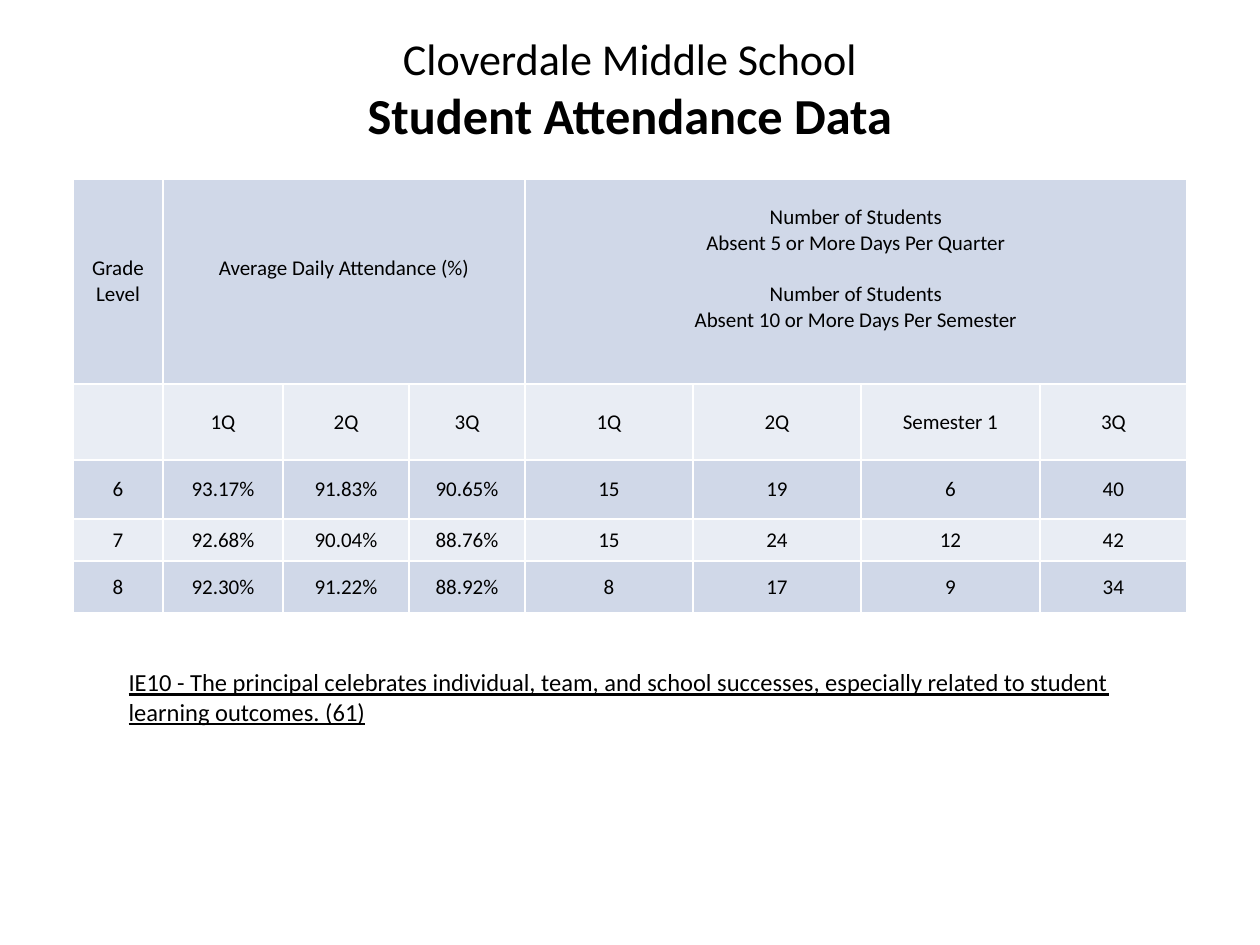
from dataclasses import dataclass
from typing import Any

from lxml.etree import SubElement
from pptx import Presentation
from pptx.dml.color import RGBColor
from pptx.enum.text import MSO_ANCHOR, MSO_AUTO_SIZE, PP_ALIGN
from pptx.oxml.ns import qn
from pptx.util import Pt

EMU_PER_INCH = 914400
PX_PER_INCH = 126
BLACK = "000000"
WHITE = "FFFFFF"
BANDS = ["D0D8E8", "E9EDF4"]
COLUMN_WIDTHS = [90, 120, 126, 116, 168, 168, 179, 147]
ROW_HEIGHTS = [205, 76, 59, 42, 52]
CELL_MARGIN = 6
CELL_FORMAT = {"size": Pt(12), "name": "Calibri", "bold": False}


@dataclass
class Heading:
    column: int
    span: int
    top: int
    lines: list[str]
    gap_before: int = -1


HEADINGS = [
    Heading(0, 1, 77, ["Grade", "Level"]),
    Heading(1, 3, 77, ["Average Daily Attendance (%)"]),
    Heading(
        4,
        4,
        26,
        [
            "Number of Students",
            "Absent 5 or More Days Per Quarter",
            "Number of Students",
            "Absent 10 or More Days Per Semester",
        ],
        2,
    ),
]
ROWS = [
    ["", "1Q", "2Q", "3Q", "1Q", "2Q", "Semester 1", "3Q"],
    ["6", "93.17%", "91.83%", "90.65%", "15", "19", "6", "40"],
    ["7", "92.68%", "90.04%", "88.76%", "15", "24", "12", "42"],
    ["8", "92.30%", "91.22%", "88.92%", "8", "17", "9", "34"],
]


def px(length: int) -> int:
    return round(length * EMU_PER_INCH / PX_PER_INCH)


def color(value: str) -> RGBColor:
    return RGBColor.from_string(value)


def set_all(target: Any, values: dict[str, Any]) -> None:
    for name, value in values.items():
        setattr(target, name, value)


def place(shape: Any, left: int, top: int, width: int, height: int) -> None:
    set_all(shape, {"left": px(left), "top": px(top), "width": px(width), "height": px(height)})


def add_span(para: Any, text: str, values: dict[str, Any]) -> None:
    span = para.add_run()
    span.text = text
    set_all(span.font, values)
    span.font.color.rgb = color(BLACK)


def add_title(page: Any) -> None:
    title = page.shapes.title
    place(title, 0, 73, 1260, 78)
    set_all(
        title.text_frame,
        {"vertical_anchor": MSO_ANCHOR.BOTTOM, "auto_size": MSO_AUTO_SIZE.NONE, "word_wrap": True},
    )
    para = title.text_frame.paragraphs[0]
    para.alignment = PP_ALIGN.CENTER
    add_span(para, "Cloverdale Middle School", {"size": Pt(25.2), "name": "Calibri"})
    para.add_line_break()
    add_span(para, "Student Attendance Data", {"size": Pt(28.8), "name": "Calibri", "bold": True})


def add_borders(cell: Any) -> None:
    properties = cell._tc.get_or_add_tcPr()
    for index, side in enumerate(["a:lnL", "a:lnR", "a:lnT", "a:lnB"]):
        line = properties.makeelement(qn(side), {"w": str(Pt(1))})
        fill = SubElement(line, qn("a:solidFill"))
        SubElement(fill, qn("a:srgbClr"), val=WHITE)
        properties.insert(index, line)


def write_cell(cell: Any, lines: list[str], gap_before: int = -1) -> None:
    for index, text in enumerate(lines):
        frame = cell.text_frame
        para = frame.add_paragraph() if index else frame.paragraphs[0]
        para.alignment = PP_ALIGN.CENTER
        if index == gap_before:
            para.space_before = Pt(14.6)
        if text:
            add_span(para, text, CELL_FORMAT)


def add_attendance_table(page: Any) -> None:
    frame = page.shapes.add_table(len(ROW_HEIGHTS), len(COLUMN_WIDTHS), 0, 0, 0, 0)
    place(frame, 73, 179, sum(COLUMN_WIDTHS), sum(ROW_HEIGHTS))
    table = frame.table
    set_all(table, {"first_row": False, "horz_banding": False})
    for column, width in zip(table.columns, COLUMN_WIDTHS):
        column.width = px(width)
    for index, (row, height) in enumerate(zip(table.rows, ROW_HEIGHTS)):
        row.height = px(height)
        for cell in row.cells:
            set_all(
                cell,
                {
                    "margin_left": px(CELL_MARGIN),
                    "margin_right": px(CELL_MARGIN),
                    "margin_top": 0,
                    "margin_bottom": 0,
                    "vertical_anchor": MSO_ANCHOR.MIDDLE,
                },
            )
            cell.fill.solid()
            cell.fill.fore_color.rgb = color(BANDS[index % 2])
            add_borders(cell)
    for heading in HEADINGS:
        cell = table.cell(0, heading.column)
        if heading.span > 1:
            cell.merge(table.cell(0, heading.column + heading.span - 1))
        set_all(cell, {"margin_top": px(heading.top), "vertical_anchor": MSO_ANCHOR.TOP})
        write_cell(cell, heading.lines, heading.gap_before)
    for row_index, values in enumerate(ROWS, start=1):
        for column_index, value in enumerate(values):
            write_cell(table.cell(row_index, column_index), [value])


def add_indicator(page: Any) -> None:
    body = page.placeholders[1]
    place(body, 116, 661, 1008, 179)
    set_all(body.text_frame, {"auto_size": MSO_AUTO_SIZE.NONE, "word_wrap": True})
    para = body.text_frame.paragraphs[0]
    properties = para._p.get_or_add_pPr()
    properties.set("marL", "0")
    properties.set("indent", "0")
    SubElement(properties, qn("a:buNone"))
    add_span(
        para,
        "IE10 - The principal celebrates individual, team, and school successes, "
        "especially related to student learning outcomes. (61)",
        {"size": Pt(14), "name": "Calibri", "underline": True},
    )


def main() -> None:
    deck = Presentation()
    set_all(deck, {"slide_width": px(1260), "slide_height": px(945)})
    page = deck.slides.add_slide(deck.slide_layouts[1])
    page.background.fill.solid()
    page.background.fill.fore_color.rgb = color(WHITE)
    add_title(page)
    add_attendance_table(page)
    add_indicator(page)
    deck.save("out.pptx")


if __name__ == "__main__":
    main()
